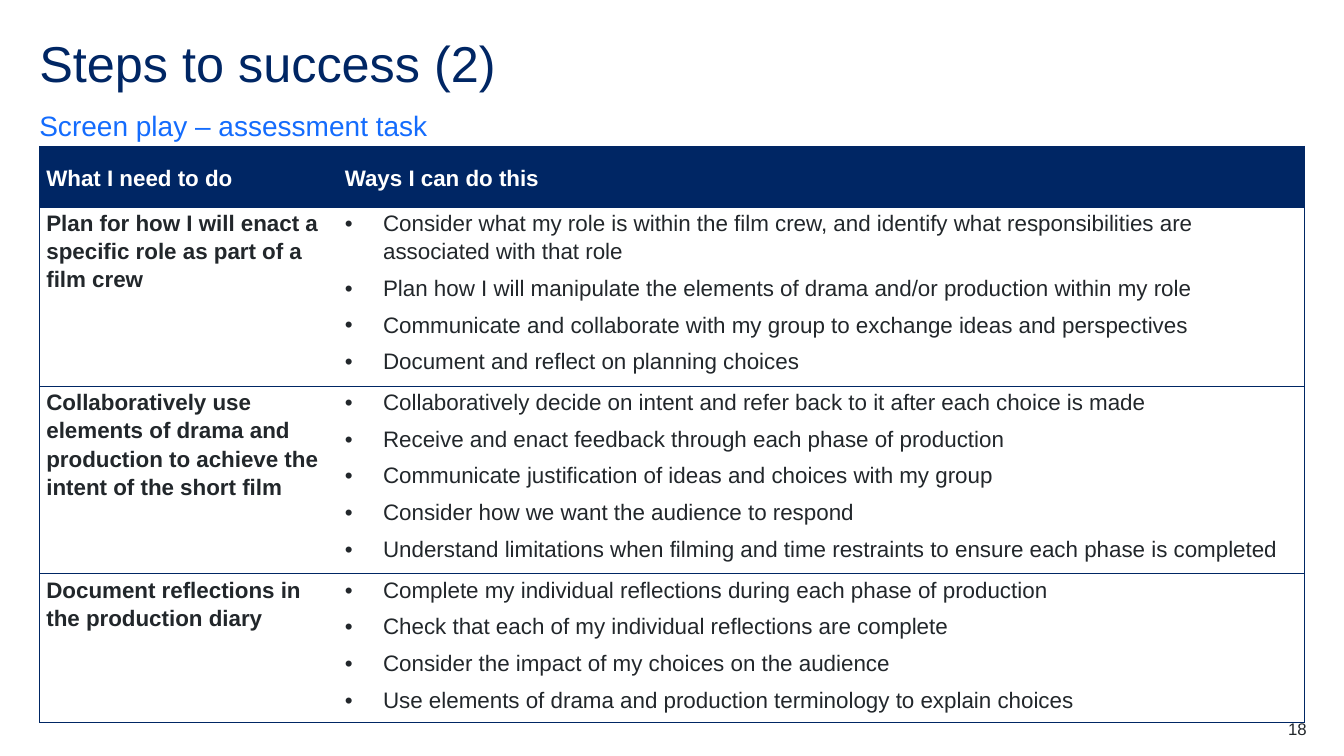
from pptx import Presentation
from pptx.dml.color import RGBColor
from pptx.enum.text import MSO_ANCHOR, PP_ALIGN
from pptx.oxml.ns import qn
from pptx.util import Inches, Pt
from lxml.etree import SubElement

TITLE = "Steps to success (2)"
TASK = "Screen play – assessment task"
PAGE = "18"
HEADS = ("What I need to do", "Ways I can do this")
STEPS = [
    ("Plan for how I will enact a specific role as part of a film crew", [
        "Consider what my role is within the film crew, and identify what "
        "responsibilities are associated with that role",
        "Plan how I will manipulate the elements of drama and/or production within my role",
        "Communicate and collaborate with my group to exchange ideas and perspectives",
        "Document and reflect on planning choices",
    ]),
    ("Collaboratively use elements of drama and production to achieve "
     "the intent of the short film", [
        "Collaboratively decide on intent and refer back to it after each choice is made",
        "Receive and enact feedback through each phase of production",
        "Communicate justification of ideas and choices with my group",
        "Consider how we want the audience to respond",
        "Understand limitations when filming and time restraints to ensure "
        "each phase is completed",
    ]),
    ("Document reflections in the production diary", [
        "Complete my individual reflections during each phase of production",
        "Check that each of my individual reflections are complete",
        "Consider the impact of my choices on the audience",
        "Use elements of drama and production terminology to explain choices",
    ]),
]
COLORS = {"navy": "002664", "blue": "146CFD", "ink": "22272B", "white": "FFFFFF"}
FONT = "Arial"
LEFT, TOP = 0.39, 1.45
COLS = (2.96, 9.59)
ROWS = (0.61, 1.66, 1.75, 1.38)
INDENT = 0.38


def write(frame, lines, size=16, color="ink", bold=False, align=PP_ALIGN.LEFT,
          space=1.14, after=6, bullet=False):
    frame.word_wrap = True
    for i, line in enumerate(lines):
        para = frame.add_paragraph() if i else frame.paragraphs[0]
        para.alignment, para.line_spacing = align, space
        para.space_before, para.space_after = Pt(0), Pt(after)
        run = para.add_run()
        run.text = line
        font = run.font
        font.name, font.size, font.bold = FONT, Pt(size), bold
        font.color.rgb = RGBColor.from_string(COLORS[color])
        if bullet:
            props = para._p.get_or_add_pPr()
            props.set("marL", str(Inches(INDENT)))
            props.set("indent", str(-Inches(INDENT)))
            SubElement(props, qn("a:buFont"), typeface=FONT)
            SubElement(props, qn("a:buChar"), char="•")


def place(shape, box, anchor, lines, **form):
    shape.left, shape.top, shape.width, shape.height = map(Inches, box)
    frame = shape.text_frame
    frame.margin_left = frame.margin_right = frame.margin_top = frame.margin_bottom = 0
    frame.vertical_anchor = anchor
    write(frame, lines, **form)


def border(cell, sides):
    """Draw the named sides (of L, R, T, B) and clear the others."""
    props = cell._tc.get_or_add_tcPr()
    for side in "LRTB":
        line = SubElement(props, qn("a:ln" + side), w=str(Pt(0.5)))
        if side in sides:
            fill = SubElement(line, qn("a:solidFill"))
            SubElement(fill, qn("a:srgbClr"), val=COLORS["navy"])
        else:
            SubElement(line, qn("a:noFill"))


def fill_cell(cell, row, col, lines, **form):
    head = row == 0
    cell.margin_left = cell.margin_right = Inches(0.07)
    cell.margin_top = Inches(0.01 if row > 1 else 0)
    cell.margin_bottom = 0
    cell.vertical_anchor = MSO_ANCHOR.MIDDLE if head else MSO_ANCHOR.TOP
    border(cell, "LR"[col] + "TB")
    if head:
        cell.fill.solid()
        cell.fill.fore_color.rgb = RGBColor.from_string(COLORS["navy"])
    else:
        cell.fill.background()
    write(cell.text_frame, lines, **form)


def main():
    deck = Presentation()
    deck.slide_width, deck.slide_height = Inches(13.33), Inches(7.5)
    slide = deck.slides.add_slide(deck.slide_layouts[5])
    shapes = slide.shapes

    place(shapes.title, (LEFT, 0.39, 12.56, 0.6), MSO_ANCHOR.TOP, [TITLE],
          size=36, color="navy", space=0.9, after=0)
    place(shapes.add_textbox(0, 0, 0, 0), (LEFT, 1.07, 12.56, 0.34),
          MSO_ANCHOR.BOTTOM, [TASK], size=20, color="blue", space=1.5, after=12)

    table = shapes.add_table(len(ROWS), len(COLS), Inches(LEFT), Inches(TOP),
                             Inches(sum(COLS)), Inches(sum(ROWS))).table
    for col, width in zip(table.columns, COLS):
        col.width = Inches(width)
    for row, height in zip(table.rows, ROWS):
        row.height = Inches(height)
    for c, head in enumerate(HEADS):
        fill_cell(table.cell(0, c), 0, c, [head], color="white", bold=True)
    for r, (step, ways) in enumerate(STEPS, 1):
        fill_cell(table.cell(r, 0), r, 0, [step], bold=True)
        fill_cell(table.cell(r, 1), r, 1, ways, bullet=True)

    place(shapes.add_textbox(0, 0, 0, 0), (12.17, 7.13, 0.79, 0.2), MSO_ANCHOR.TOP,
          [PAGE], size=12, align=PP_ALIGN.RIGHT, space=1.0, after=0)
    deck.save("out.pptx")


if __name__ == "__main__":
    main()
